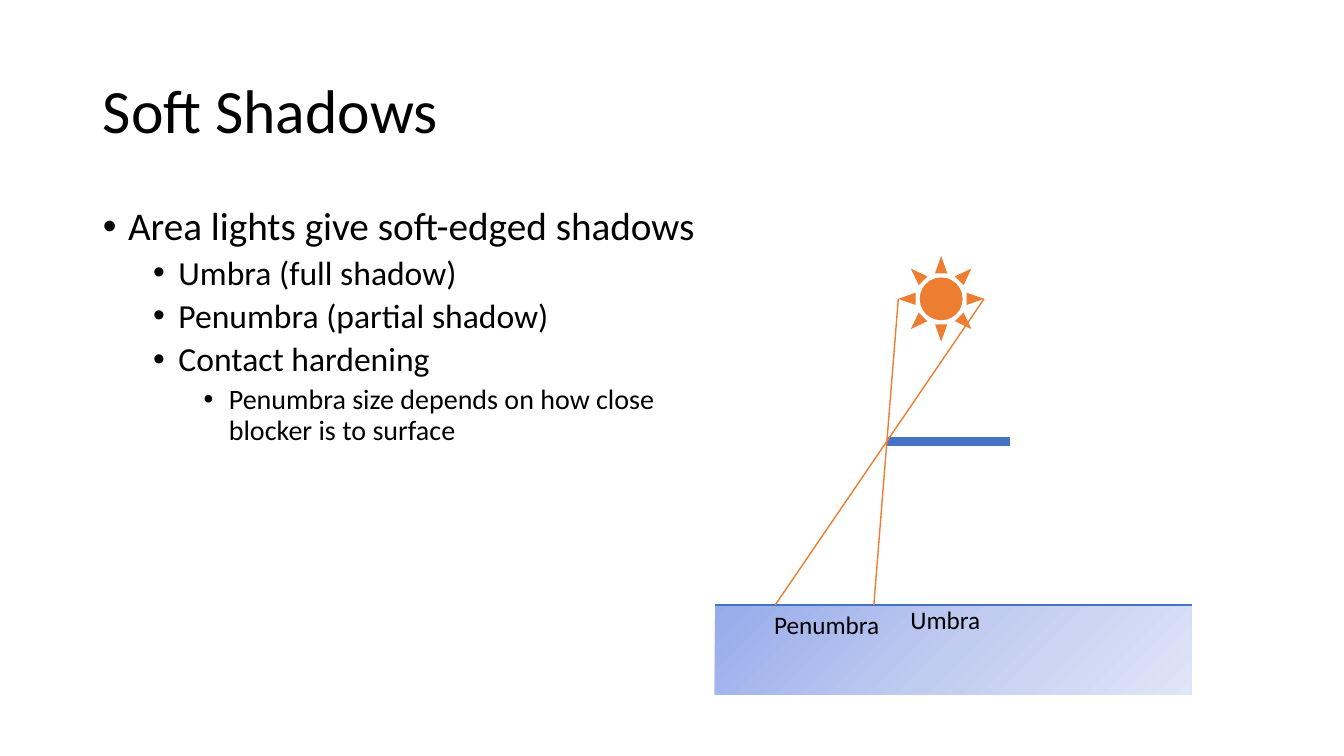
from copy import deepcopy
from dataclasses import dataclass

from lxml.etree import SubElement
from pptx import Presentation
from pptx.dml.color import RGBColor
from pptx.enum.shapes import MSO_CONNECTOR, MSO_SHAPE
from pptx.enum.text import MSO_ANCHOR, MSO_AUTO_SIZE, PP_ALIGN
from pptx.oxml.ns import qn
from pptx.shapes.autoshape import Shape
from pptx.slide import Slide
from pptx.text.text import TextFrame, _Paragraph
from pptx.util import Inches, Pt

WIDTH, HEIGHT = Inches(13.33), Inches(7.5)
COLUMNS = ROWS = 100


@dataclass(frozen=True)
class Theme:
    font: str = "Calibri"
    ink: str = "000000"
    surface: str = "4472C4"
    light: str = "ED7D31"
    ground: tuple[str, ...] = ("96ABEA", "C0CBF0", "E0E5F7")
    title_size: int = 44
    bullet_sizes: tuple[int, ...] = (28, 24, 20)
    label_size: int = 18


@dataclass(frozen=True)
class Area:
    column: float
    row: float
    columns: float
    rows: float

    def box(self) -> tuple[int, int, int, int]:
        return (across(self.column), down(self.row),
                across(self.columns), down(self.rows))


@dataclass(frozen=True)
class Bullet:
    text: str
    level: int


@dataclass(frozen=True)
class Segment:
    start: tuple[float, float]
    end: tuple[float, float]
    color: str
    weight: float


@dataclass(frozen=True)
class Label:
    text: str
    area: Area


THEME = Theme()
TITLE = Area(6.9, 5.33, 86.27, 19.33)
BODY = Area(6.9, 26.67, 86.27, 63.47)
GROUND = Area(53.19, 80, 35.48, 11.87)
SUN = Area(66.84, 33.87, 6.38, 11.33)
SUN_MIDDLE = SUN.row + SUN.rows / 2
BLOCKER_ROW = 58.4

BULLETS = (
    Bullet("Area lights give soft-edged shadows", 0),
    Bullet("Umbra (full shadow)", 1),
    Bullet("Penumbra (partial shadow)", 1),
    Bullet("Contact hardening", 1),
    Bullet("Penumbra size depends on how close\nblocker is to surface", 2),
)
SURFACES = (
    Segment((GROUND.column, GROUND.row),
            (GROUND.column + GROUND.columns, GROUND.row), THEME.surface, 1.5),
    Segment((66, BLOCKER_ROW), (75.15, BLOCKER_ROW), THEME.surface, 6),
)
RAYS = (
    Segment((SUN.column, SUN_MIDDLE), (65.02, GROUND.row), THEME.light, 1),
    Segment((SUN.column + SUN.columns, SUN_MIDDLE),
            (57.69, GROUND.row), THEME.light, 1),
)
LABELS = (
    Label("Umbra", Area(67, 79.33, 6.75, 5.33)),
    Label("Penumbra", Area(56.86, 80, 9.45, 5.33)),
)


def across(columns: float) -> int:
    return round(WIDTH * columns / COLUMNS)


def down(rows: float) -> int:
    return round(HEIGHT * rows / ROWS)


def place(shape: Shape, area: Area) -> None:
    shape.left, shape.top, shape.width, shape.height = area.box()


def write(paragraph: _Paragraph, text: str, *, size: float,
          spacing: float = 1.0, before: float = 0) -> None:
    paragraph.alignment = PP_ALIGN.LEFT
    paragraph.line_spacing = spacing
    paragraph.space_before = Pt(before)
    for index, line in enumerate(text.split("\n")):
        if index:
            paragraph.add_line_break()
        run = paragraph.add_run()
        run.text = line
        run.font.name = THEME.font
        run.font.size = Pt(size)
        run.font.color.rgb = RGBColor.from_string(THEME.ink)


def add_bullets(frame: TextFrame, bullets: tuple[Bullet, ...]) -> None:
    for index, bullet in enumerate(bullets):
        paragraph = frame.add_paragraph() if index else frame.paragraphs[0]
        paragraph.level = bullet.level
        write(paragraph, bullet.text, size=THEME.bullet_sizes[bullet.level],
              spacing=0.9, before=5 if bullet.level else 10)
        properties = paragraph._p.get_or_add_pPr()
        properties.set("marL", str(Inches(0.25 + 0.5 * bullet.level)))
        properties.set("indent", str(Inches(-0.25)))
        SubElement(properties, qn("a:buFont")).set("typeface", "Arial")
        SubElement(properties, qn("a:buChar")).set("char", "•")


def add_preset(slide: Slide, preset: MSO_SHAPE, area: Area) -> Shape:
    shape = slide.shapes.add_shape(preset, *area.box())
    shape.shadow.inherit = False
    shape.line.fill.background()
    return shape


def add_ground(slide: Slide) -> None:
    ground = add_preset(slide, MSO_SHAPE.RECTANGLE, GROUND)
    ground.fill.gradient()
    ground.fill.gradient_angle = 315
    first_stop = ground.fill._fill._gradFill.find(qn("a:gsLst"))[0]
    first_stop.addnext(deepcopy(first_stop))
    stops = ground.fill.gradient_stops
    for index, (stop, color) in enumerate(zip(stops, THEME.ground)):
        stop.position = index / (len(THEME.ground) - 1)
        stop.color.rgb = RGBColor.from_string(color)


def add_sun(slide: Slide) -> None:
    sun = add_preset(slide, MSO_SHAPE.SUN, SUN)
    sun.fill.solid()
    sun.fill.fore_color.rgb = RGBColor.from_string(THEME.light)


def add_segment(slide: Slide, segment: Segment) -> None:
    connector = slide.shapes.add_connector(
        MSO_CONNECTOR.STRAIGHT,
        across(segment.start[0]), down(segment.start[1]),
        across(segment.end[0]), down(segment.end[1]))
    connector.line.color.rgb = RGBColor.from_string(segment.color)
    connector.line.width = Pt(segment.weight)
    SubElement(connector._element.spPr, qn("a:effectLst"))


def add_label(slide: Slide, label: Label) -> None:
    frame = slide.shapes.add_textbox(*label.area.box()).text_frame
    frame.word_wrap = False
    frame.auto_size = MSO_AUTO_SIZE.SHAPE_TO_FIT_TEXT
    write(frame.paragraphs[0], label.text, size=THEME.label_size)


def main() -> None:
    deck = Presentation()
    deck.slide_width, deck.slide_height = WIDTH, HEIGHT
    slide = deck.slides.add_slide(deck.slide_layouts[1])

    heading, points = slide.shapes.title, slide.placeholders[1]
    for placeholder, area in ((heading, TITLE), (points, BODY)):
        place(placeholder, area)
        placeholder.text_frame.auto_size = MSO_AUTO_SIZE.NONE
    heading.text_frame.vertical_anchor = MSO_ANCHOR.MIDDLE
    write(heading.text_frame.paragraphs[0], "Soft Shadows",
          size=THEME.title_size, spacing=0.9)
    add_bullets(points.text_frame, BULLETS)

    add_ground(slide)
    for surface in SURFACES:
        add_segment(slide, surface)
    add_sun(slide)
    for ray in RAYS:
        add_segment(slide, ray)
    for label in LABELS:
        add_label(slide, label)
    deck.save("out.pptx")


if __name__ == "__main__":
    main()
